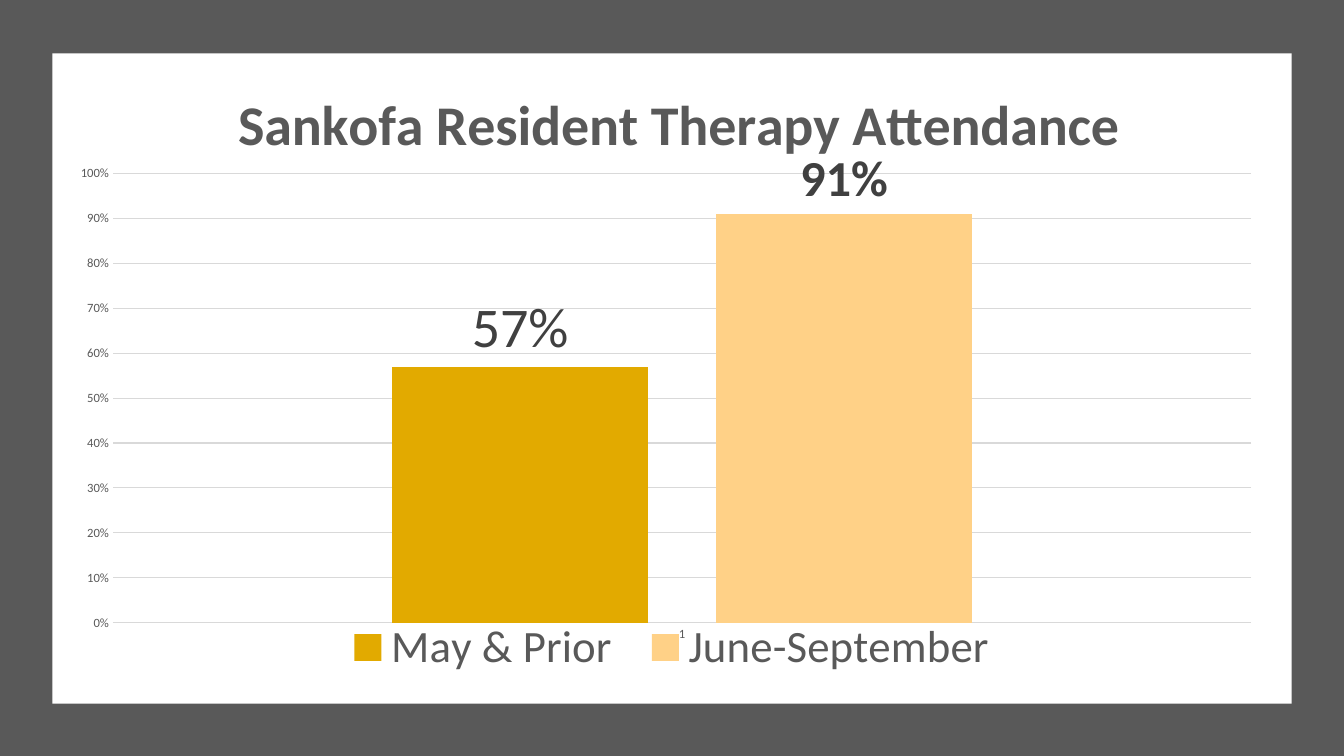
from pptx import Presentation
from pptx.chart.data import CategoryChartData
from pptx.dml.color import RGBColor
from pptx.enum.chart import XL_CHART_TYPE as ChartType, XL_LABEL_POSITION as LabelPos
from pptx.enum.chart import XL_LEGEND_POSITION as LegendPos, XL_TICK_MARK as Tick
from pptx.enum.shapes import MSO_SHAPE
from pptx.oxml import parse_xml
from pptx.oxml.ns import nsdecls, qn
from pptx.util import Inches, Pt

GRAY = RGBColor(0x59, 0x59, 0x59)
DARK = RGBColor(0x40, 0x40, 0x40)
GRID = RGBColor(0xD9, 0xD9, 0xD9)
WHITE = RGBColor(0xFF, 0xFF, 0xFF)
GOLD = RGBColor(0xE2, 0xAA, 0x00)
PEACH = RGBColor(0xFF, 0xD1, 0x87)

TITLE = "Sankofa Resident Therapy Attendance"
CATEGORIES = ["1"]
ATTENDANCE = [
    ("May & Prior ", 0.57, GOLD, 40, False),
    ("June-September", 0.91, PEACH, 36, True),
]
WIDTH, HEIGHT = 13.33, 7.5
FRAMES = [
    (0, 0, WIDTH, HEIGHT, GRAY),
    (0.52, 0.53, 12.29, 6.45, WHITE),
]
CHART_AREA = (0.7, 0.7, 11.93, 6.09)
PLOT_BOX = {"x": 0.42, "y": 1.02, "w": 11.29, "h": 4.46}
TITLE_BOX = {"x": 1.56, "y": 0.06}


def set_font(font, size, color, bold=False):
    font.name = "Calibri"
    font.size = Pt(size)
    font.bold = bold
    font.color.rgb = color


def set_layout(element, index, box, inner=False):
    for old in element.findall(qn("c:layout")):
        element.remove(old)
    width, height = CHART_AREA[2:]
    target = '<c:layoutTarget val="inner"/>' if inner else ""
    modes = "".join(f'<c:{k}Mode val="edge"/>' for k in "xy")
    values = "".join(
        f'<c:{k} val="{v / (width if k in "xw" else height):.4f}"/>'
        for k, v in box.items())
    element.insert(index, parse_xml(
        f'<c:layout {nsdecls("c")}><c:manualLayout>{target}{modes}{values}'
        "</c:manualLayout></c:layout>"))


def add_frame(s, left, top, width, height, color):
    sp = s.shapes.add_shape(MSO_SHAPE.RECTANGLE, *map(Inches, (left, top, width, height)))
    sp.shadow.inherit = False
    sp.fill.solid()
    sp.fill.fore_color.rgb = color
    sp.line.fill.background()


def add_attendance_chart(s):
    data = CategoryChartData(number_format="0%")
    data.categories = CATEGORIES
    for name, value, *_ in ATTENDANCE:
        data.add_series(name, [value])
    chart = s.shapes.add_chart(
        ChartType.COLUMN_CLUSTERED, *map(Inches, CHART_AREA), data).chart
    set_font(chart.font, 10, GRAY)

    chart.has_title = True
    p = chart.chart_title.text_frame.paragraphs[0]
    p.text = TITLE
    set_font(p.runs[0].font, 40, GRAY, True)
    set_layout(chart.chart_title._element, 1, TITLE_BOX)

    chart.has_legend = True
    chart.legend.position = LegendPos.BOTTOM
    chart.legend.include_in_layout = False
    set_font(chart.legend.font, 32, GRAY)

    for axis in (chart.category_axis, chart.value_axis):
        axis.major_tick_mark = axis.minor_tick_mark = Tick.NONE
        set_font(axis.tick_labels.font, 9, GRAY)
    values = chart.value_axis
    values.minimum_scale, values.maximum_scale, values.major_unit = 0, 1, 0.1
    values.tick_labels.number_format = "0%"
    values.tick_labels.number_format_is_linked = False
    values.format.line.fill.background()
    for line in (chart.category_axis.format.line, values.major_gridlines.format.line):
        line.color.rgb = GRID
        line.width = Pt(0.75)

    plot = chart.plots[0]
    plot.gap_width, plot.overlap, plot.vary_by_categories = 219, -27, False
    for series, (_, _, color, size, bold) in zip(plot.series, ATTENDANCE):
        series.format.fill.solid()
        series.format.fill.fore_color.rgb = color
        labels = series.data_labels
        labels.show_value = True
        labels.number_format = "0%"
        labels.number_format_is_linked = False
        labels.position = LabelPos.OUTSIDE_END
        set_font(labels.font, size, DARK, bold)
    set_layout(chart._chartSpace.chart.plotArea, 0, PLOT_BOX, inner=True)


def main():
    prs = Presentation()
    prs.slide_width, prs.slide_height = Inches(WIDTH), Inches(HEIGHT)
    s = prs.slides.add_slide(prs.slide_layouts[6])
    for frame in FRAMES:
        add_frame(s, *frame)
    add_attendance_chart(s)
    prs.save("out.pptx")


if __name__ == "__main__":
    main()
